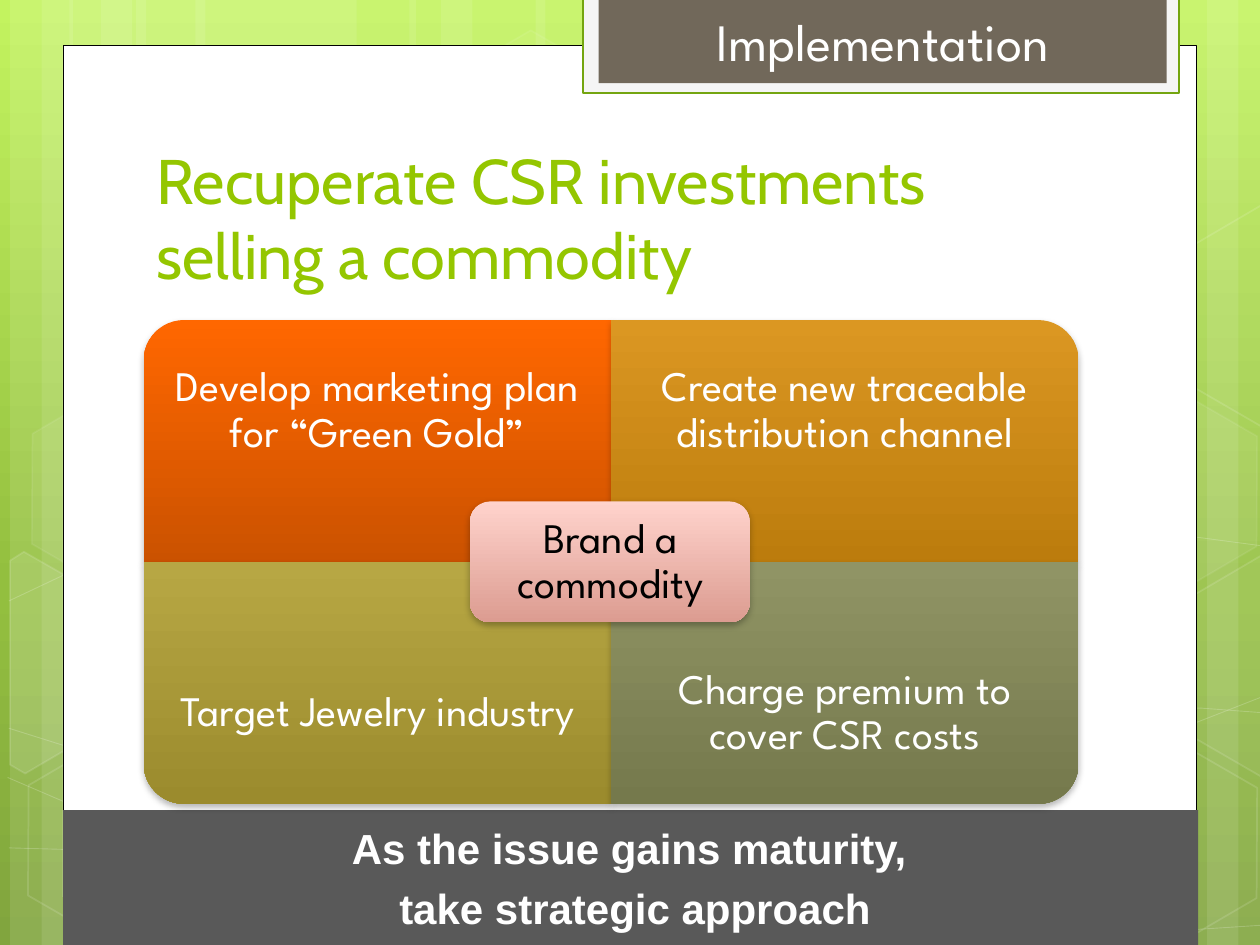
from lxml import etree
from pptx import Presentation
from pptx.dml.color import RGBColor
from pptx.enum.shapes import MSO_SHAPE as Form
from pptx.enum.text import MSO_ANCHOR as Anchor, MSO_AUTO_SIZE as Fit, PP_ALIGN as Align
from pptx.oxml.ns import qn
from pptx.util import Inches, Pt

WHITE = RGBColor(0xFF, 0xFF, 0xFF)
BLACK = RGBColor(0, 0, 0)
SMOKE = RGBColor(0xF5, 0xF5, 0xF5)
GREEN = RGBColor(0x74, 0xA5, 0x10)
LIME = RGBColor(0x94, 0xC6, 0x00)
BROWN = RGBColor(0x71, 0x68, 0x5A)
GRAY = RGBColor(0x59, 0x59, 0x59)
SKY = [(0, RGBColor(0xC3, 0xF3, 0x5F)), (62, RGBColor(0x93, 0xBF, 0x3F)),
       (100, RGBColor(0x81, 0xA5, 0x3E))]
ORANGE = RGBColor(0xFF, 0x67, 0x00), RGBColor(0xCB, 0x52, 0x00)
AMBER = RGBColor(0xDB, 0x97, 0x22), RGBColor(0xBC, 0x7C, 0x0D)
OLIVE = RGBColor(0xB7, 0xA7, 0x44), RGBColor(0x9B, 0x8B, 0x2D)
SAGE = RGBColor(0x90, 0x94, 0x65), RGBColor(0x75, 0x79, 0x4C)
PINK = RGBColor(0xFF, 0xD3, 0xCC), RGBColor(0xDC, 0x9C, 0x91)


def paint(shape, fill=None, line=None, width=1, alpha=100, veil=100):
    shape.shadow.inherit = False
    for part, tint, level in ((shape.fill, fill, alpha), (shape.line.fill, line, veil)):
        if tint is None:
            part.background()
            continue
        part.solid()
        part.fore_color.rgb = tint
        if level < 100:
            root = shape._element.spPr
            if part is not shape.fill:
                root = root.find(qn("a:ln"))
            node = root.find(qn("a:solidFill"))[0]
            etree.SubElement(node, qn("a:alpha"), val=str(level * 1000))
    if line is not None:
        shape.line.width = Pt(width)


def blend(fill, root, stops, angle):
    fill.gradient()
    node = next(root.iter(qn("a:gradFill")))
    for child in list(node):
        node.remove(child)
    group = etree.SubElement(node, qn("a:gsLst"))
    for place, tint in stops:
        stop = etree.SubElement(group, qn("a:gs"), pos=str(place * 1000))
        etree.SubElement(stop, qn("a:srgbClr"), val=str(tint))
    etree.SubElement(node, qn("a:lin"), ang=str(angle * 60000), scaled="0")


deck = Presentation()
deck.slide_width, deck.slide_height = Inches(10), Inches(7.5)
slide = deck.slides.add_slide(deck.slide_layouts[5])
shapes = slide.shapes
blend(slide.background.fill, slide._element, SKY, 90)

strips = [(1.08, 1.75), (0.08, 0.5), (0.33, 0.83), (1.55, 1.75), (0.55, 0.5),
          (0.8, 0.83), (7.33, 1.75), (9.58, 0.5), (9, 0.83), (4.25, 3.08),
          (3.25, 0.5), (3.5, 0.83)]
for left, wide in strips:
    strip = shapes.add_shape(Form.RECTANGLE, Inches(left), 0, Inches(wide), Inches(7.5))
    paint(strip, WHITE, alpha=10)

curves = [
    [(0.07, 6.73), (1.9, 6.78), (4.58, 6.65), (7.92, 6.17), (9.2, 5.85), (10.07, 5.51)],
    [(0.07, 4.77), (0.6, 4.52), (1.21, 4.31), (3.47, 3.87), (6.54, 3.87), (10.07, 4.34)],
    [(0.06, 6.17), (1.9, 6.96), (3.34, 7.49)],
    [(0.07, 5.78), (1.28, 6.16), (3.57, 6.73), (6.28, 7.18), (8.53, 7.36), (9.45, 7.38),
     (10.07, 7.34)],
    [(2.42, 7.49), (3.02, 6.91), (3.88, 6.39), (4.7, 6.09), (6.08, 5.78), (6.8, 5.69),
     (7.94, 5.62), (9.53, 5.62), (10.06, 5.66)],
]
shards = [
    ([(0.08, 4.45), (0.19, 4.38), (0.96, 4.82), (0.95, 5.7), (0.2, 6.14), (0.08, 6.07)], 10),
    ([(9.26, 4.85), (10.01, 4.41), (10.09, 4.46), (10.09, 6.13), (10.02, 6.17),
      (9.26, 5.73)], 4),
    ([(9.26, 2.07), (10.01, 1.63), (10.1, 1.68), (10.09, 3.35), (10.02, 3.39),
      (9.26, 2.95)], 0),
]
paths = [(dots, False, 0, 0.5, 20) for dots in curves]
paths += [(dots, True, alpha, 1, 12) for dots, alpha in shards]
for dots, closed, alpha, width, veil in paths:
    dots = [(Inches(x), Inches(y)) for x, y in dots]
    pen = shapes.build_freeform(*dots[0])
    pen.add_line_segments(dots[1:], close=closed)
    paint(pen.convert_to_shape(), WHITE if alpha else None, WHITE, width, alpha, veil)

cells = [(3.34, 0.36, 4, 8), (0.11, 5.91, 0, 12), (0.14, 3.12, 7, 8),
         (8.34, 5.93, 0, 12), (8.34, 3.14, 7, 8)]
for left, top, alpha, veil in cells:
    cell = shapes.add_shape(Form.HEXAGON, Inches(left), Inches(top), Inches(1.75), Inches(1.52))
    cell.adjustments[0] = 0.285
    cell.rotation = 30
    paint(cell, WHITE if alpha else None, WHITE, 1, alpha, veil)

panels = [(0.5, 0.36, 9, 6.76, WHITE, BLACK, 0.5),
          (4.63, -0.02, 4.73, 0.76, SMOKE, GREEN, 1.25),
          (4.75, -0.02, 4.51, 0.68, BROWN, None, 1),
          (0.5, 6.43, 9.01, 1.07, GRAY, None, 1)]
for left, top, wide, high, fill, line, width in panels:
    panel = shapes.add_shape(Form.RECTANGLE, Inches(left), Inches(top), Inches(wide), Inches(high))
    paint(panel, fill, line, width)

WIDE, HIGH = 3.71, 1.92
LEFT, TOP = 1.14, 2.54
tiles = [(LEFT, TOP, WIDE, HIGH, 270, ORANGE), (LEFT + WIDE, TOP, WIDE, HIGH, 0, AMBER),
         (LEFT, TOP + HIGH, WIDE, HIGH, 180, OLIVE),
         (LEFT + WIDE, TOP + HIGH, WIDE, HIGH, 90, SAGE),
         (3.73, 3.98, 2.22, 0.96, 0, PINK)]
for left, top, wide, high, turn, tints in tiles:
    form = Form.ROUNDED_RECTANGLE if tints is PINK else Form.ROUND_1_RECTANGLE
    midx, midy = left + wide / 2, top + high / 2
    if turn in (90, 270):
        wide, high = high, wide
    tile = shapes.add_shape(form, Inches(midx - wide / 2), Inches(midy - high / 2),
                            Inches(wide), Inches(high))
    tile.rotation = turn
    paint(tile)
    blend(tile.fill, tile._element.spPr, zip((0, 100), tints), (90 - turn) % 360)
    glow = etree.SubElement(tile._element.spPr.find(qn("a:effectLst")), qn("a:outerShdw"),
                            blurRad=str(Pt(4)), dist=str(Pt(2)), dir="5400000",
                            rotWithShape="0")
    tint = etree.SubElement(glow, qn("a:srgbClr"), val=str(BLACK))
    etree.SubElement(tint, qn("a:alpha"), val="28000")

labels = [
    (LEFT, TOP, WIDE, 1.44, 0.19, 24, WHITE, "Develop marketing plan for “Green Gold”"),
    (LEFT + WIDE, TOP, WIDE, 1.44, 0.19, 24, WHITE, "Create new traceable distribution channel"),
    (LEFT, 4.94, WIDE, 1.44, 0.19, 24, WHITE, "Target Jewelry industry"),
    (LEFT + WIDE, 4.94, WIDE, 1.44, 0.19, 24, WHITE, "Charge premium to cover CSR costs"),
    (3.78, 4.03, 2.13, 0.87, 0.1, 24, BLACK, "Brand a commodity"),
    (4.75, -0.01, 4.51, 0.66, 0.05, 30, WHITE, "Implementation"),
]
for left, top, wide, high, inset, size, tint, text in labels:
    frame = shapes.add_textbox(Inches(left), Inches(top), Inches(wide), Inches(high)).text_frame
    frame.word_wrap = True
    frame.vertical_anchor = Anchor.MIDDLE
    frame.margin_left = frame.margin_right = Inches(inset)
    frame.margin_top = frame.margin_bottom = Inches(inset)
    para = frame.paragraphs[0]
    para.alignment = Align.CENTER
    para.line_spacing = 0.9 if size == 24 else 1
    run = para.add_run()
    run.text = text
    run.font.name, run.font.size = "League Spartan", Pt(size)
    run.font.color.rgb = tint

frame = panel.text_frame
frame.word_wrap = True
frame.vertical_anchor = Anchor.MIDDLE
for row, text in enumerate(("As the issue gains maturity, ", "take strategic approach")):
    para = frame.add_paragraph() if row else frame.paragraphs[0]
    para.alignment = Align.CENTER
    para._p.get_or_add_pPr().set("marL", str(Inches(0.07)))
    if row:
        para.space_before = Pt(5.5)
    run = para.add_run()
    run.text = text
    run.font.name, run.font.size, run.font.bold = "Arial", Pt(24), True
    run.font.color.rgb = WHITE

title = shapes.title
shapes._spTree.append(title._element)
title.left, title.top = Inches(1.14), Inches(1.12)
title.width, title.height = Inches(7.68), Inches(1.25)
frame = title.text_frame
frame.word_wrap = True
frame.auto_size = Fit.NONE
frame.vertical_anchor = Anchor.BOTTOM
para = frame.paragraphs[0]
para.alignment = Align.LEFT
run = para.add_run()
run.text = "Recuperate CSR investments selling a commodity"
run.font.name, run.font.size = "Cabin", Pt(36)
run.font.color.rgb = LIME

deck.save("out.pptx")
